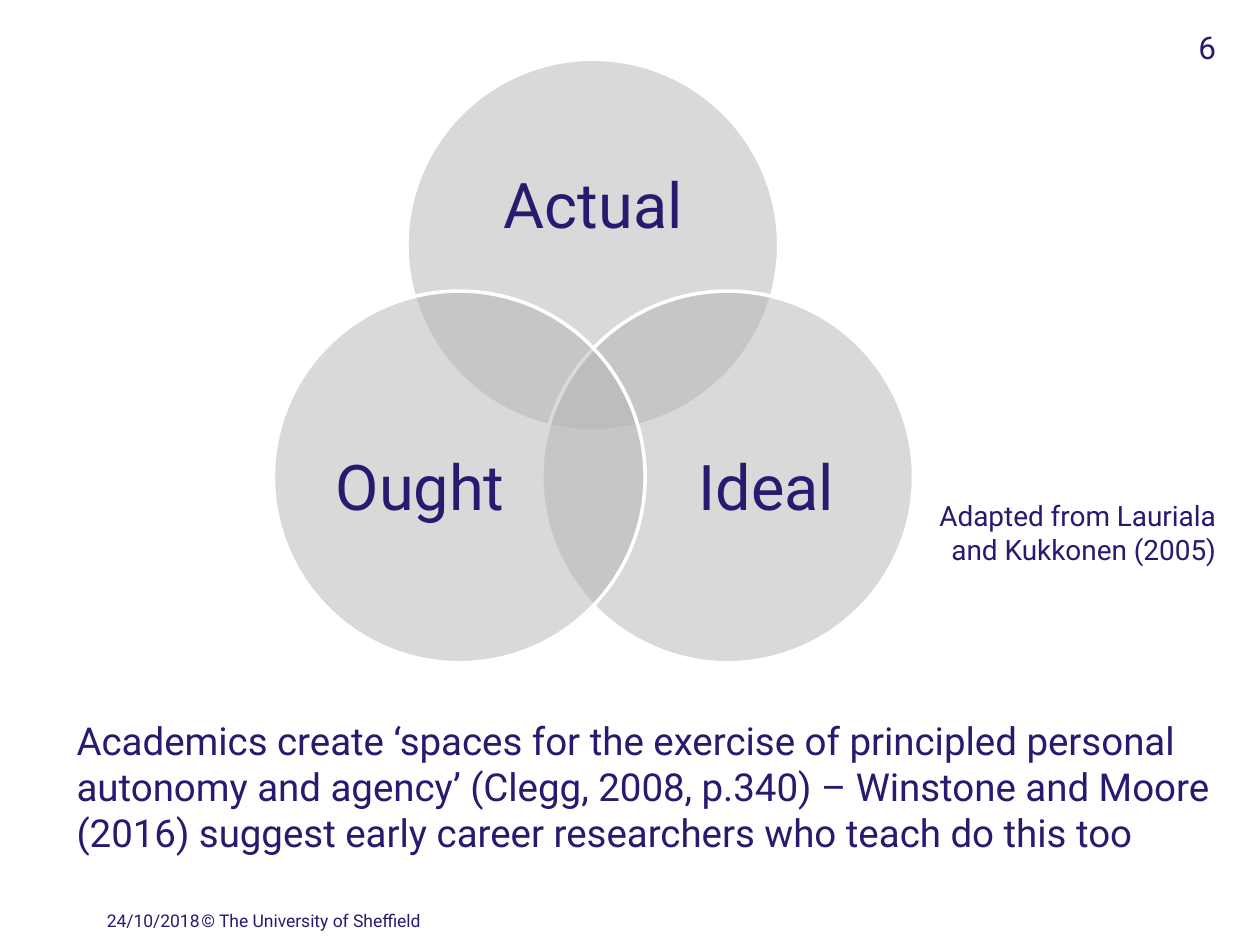
"""Build a slide with a three-circle Venn diagram of actual, ideal and ought selves."""
from lxml import etree
from pptx import Presentation
from pptx import util as u
from pptx.dml import color
from pptx.enum import shapes, text
from pptx.oxml import ns

COLORS = {"ink": "2A196F", "circle": "B5B5B5", "outline": "FFFFFF"}
FONT = "Roboto"
DIAMETER = 2.95

deck = Presentation()
deck.slide_width, deck.slide_height = u.Inches(10), u.Inches(7.5)
page = deck.slides.add_slide(deck.slide_layouts[6])


def add_text(words, left, top, width, height, size, align=text.PP_ALIGN.LEFT,
             anchor=text.MSO_ANCHOR.TOP, inset=True, spacing=None):
    box = page.shapes.add_textbox(*map(u.Inches, (left, top, width, height)))
    frame = box.text_frame
    frame.word_wrap = True
    frame.vertical_anchor = anchor
    if not inset:
        frame.margin_left = frame.margin_right = 0
        frame.margin_top = frame.margin_bottom = 0
    para = frame.paragraphs[0]
    para.alignment = align
    para.line_spacing = spacing
    span = para.add_run()
    span.text = words
    span.font.name = FONT
    span.font.size = u.Pt(size)
    span.font.color.rgb = color.RGBColor.from_string(COLORS["ink"])


add_text("24/10/2018", 0.75, 7.17, 1, 0.33, 10)
add_text("© The University of Sheffield", 1.5, 7.17, 5.67, 0.33, 10)
add_text("6", 7.67, 0.17, 2.08, 0.5, 18, align=text.PP_ALIGN.RIGHT)

venn = [
    ("Actual", (3.23, 0.47), (3.63, 0.99, 2.16, 1.33)),
    ("Ideal", (4.3, 2.31), (5.2, 3.08, 1.77, 1.62)),
    ("Ought", (2.17, 2.31), (2.45, 3.08, 1.77, 1.62)),
]
for label, (left, top), label_area in venn:
    circle = page.shapes.add_shape(
        shapes.MSO_SHAPE.OVAL, u.Inches(left), u.Inches(top),
        u.Inches(DIAMETER), u.Inches(DIAMETER))
    circle.shadow.inherit = False
    circle.fill.solid()
    circle.fill.fore_color.rgb = color.RGBColor.from_string(COLORS["circle"])
    fill_color = circle.fill._xPr.find(ns.qn("a:solidFill"))[0]
    etree.SubElement(fill_color, ns.qn("a:alpha"), val="50000")
    circle.line.color.rgb = color.RGBColor.from_string(COLORS["outline"])
    circle.line.width = u.Pt(2)
    add_text(label, *label_area, 36, align=text.PP_ALIGN.CENTER,
             anchor=text.MSO_ANCHOR.MIDDLE, inset=False, spacing=0.9)

add_text("Adapted from Lauriala and Kukkonen (2005)", 7.03, 3.91, 2.72, 0.64, 16,
         align=text.PP_ALIGN.RIGHT)
add_text("Academics create ‘spaces for the exercise of principled personal autonomy "
         "and agency’ (Clegg, 2008, p.340) – Winstone and Moore (2016) suggest early "
         "career researchers who teach do this too", 0.51, 5.64, 9.24, 1.21, 22)

deck.save("out.pptx")
